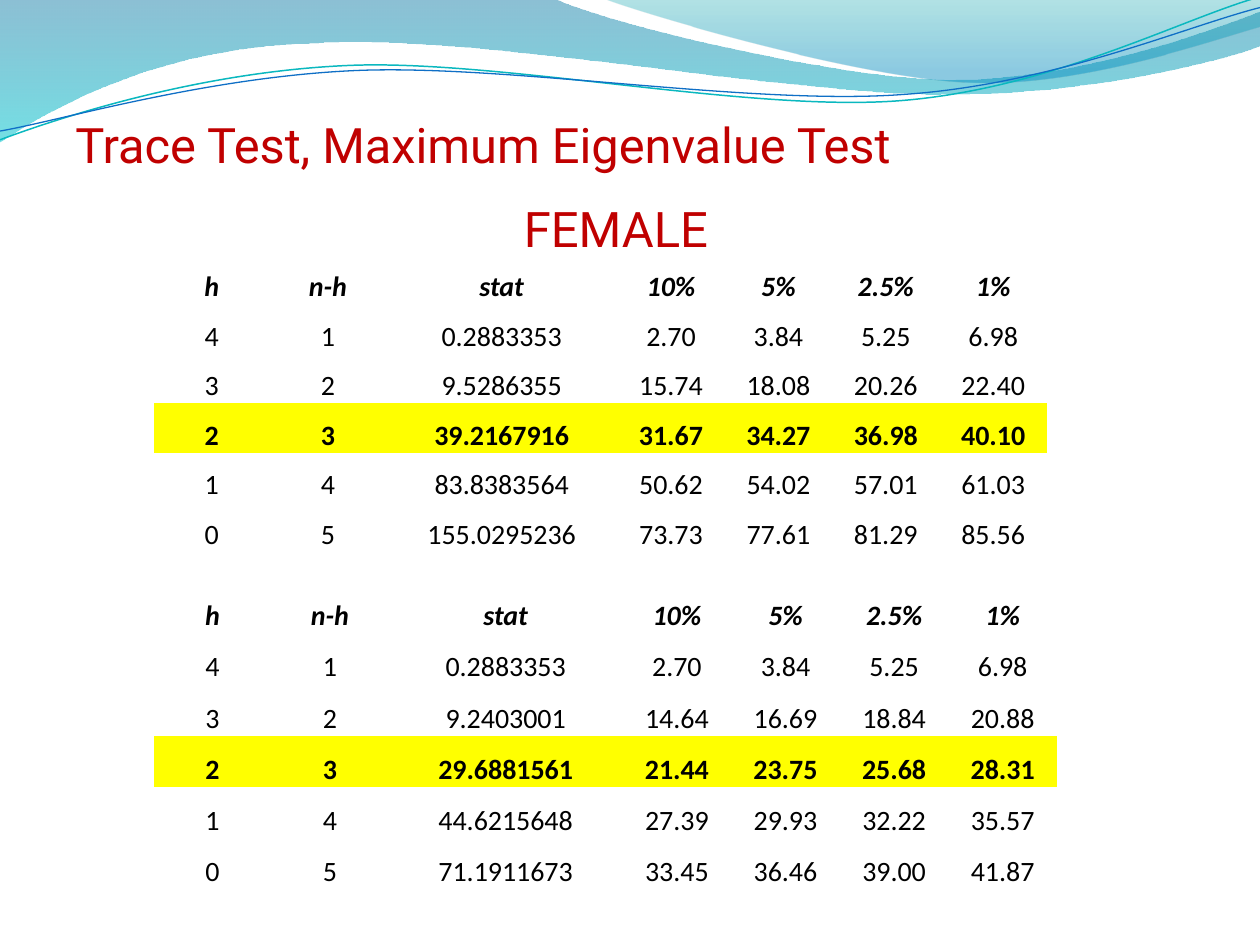
import math

import pptx
import pptx.dml.color
import pptx.enum.text
import pptx.oxml.ns
import pptx.util
from lxml import etree

Pt = pptx.util.Pt
RGBColor = pptx.dml.color.RGBColor
qn = pptx.oxml.ns.qn
ALIGN = pptx.enum.text.PP_ALIGN
ANCHOR = pptx.enum.text.MSO_ANCHOR

RED = RGBColor(0xC0, 0x00, 0x00)
BLACK = RGBColor(0x00, 0x00, 0x00)
YELLOW = RGBColor(0xFF, 0xFF, 0x00)
OCEAN = RGBColor(0x00, 0x74, 0xA1)
AQUA = RGBColor(0x00, 0xC6, 0xCF)
TEAL = RGBColor(0x00, 0xA1, 0xA9)
SKY = RGBColor(0x00, 0x8B, 0xBF)
TURQUOISE = RGBColor(0x0A, 0xB8, 0xBF)
BLUE = RGBColor(0x0F, 0x6F, 0xC6)

PLAIN_TABLE_STYLE = "{2D5ABB26-0587-4C30-8999-92F81FD0307C}"
COLUMN_WEIGHTS = (0.92, 0.92, 1.83, 0.85, 0.85, 0.85, 0.85)
HEADINGS = ("h", "n-h", "stat", "10%", "5%", "2.5%", "1%")
HIGHLIGHTED_ROW = 3
LINE_TURN = 357.3

TRACE_ROWS = (
    ("4", "1", "0.2883353", "2.70", "3.84", "5.25", "6.98"),
    ("3", "2", "9.5286355", "15.74", "18.08", "20.26", "22.40"),
    ("2", "3", "39.2167916", "31.67", "34.27", "36.98", "40.10"),
    ("1", "4", "83.8383564", "50.62", "54.02", "57.01", "61.03"),
    ("0", "5", "155.0295236", "73.73", "77.61", "81.29", "85.56"),
)
EIGENVALUE_ROWS = (
    ("4", "1", "0.2883353", "2.70", "3.84", "5.25", "6.98"),
    ("3", "2", "9.2403001", "14.64", "16.69", "18.84", "20.88"),
    ("2", "3", "29.6881561", "21.44", "23.75", "25.68", "28.31"),
    ("1", "4", "44.6215648", "27.39", "29.93", "32.22", "35.57"),
    ("0", "5", "71.1911673", "33.45", "36.46", "39.00", "41.87"),
)

BROAD_WAVE = (
    (0, 0), (316.8, -0.7),
    (342.7, 12.2, 478.1, 45.4, 545.8, 45.4), (613.8, 45.4, 689.8, 18.7, 720, 6.5),
    (720.7, 25.9),
    (707.8, 31.7, 626.4, 54.7, 537.1, 54), (447.8, 54, 275, 20.2, 185, 24.5),
    (92.9, 25.9, 33.1, 59.8, -0.7, 81.4), (0, 0),
)
CORNER_WAVE = (
    (344.9, -0.7),
    (366.5, 7.9, 491, 44.6, 553.7, 46.8), (616.3, 49.7, 691.9, 23, 720, 15.1),
    (720, 0), (344.9, -0.7),
)
TURQUOISE_LINE = (
    (0, 79.9),
    (34.6, 67, 113.8, 41, 199.4, 37.4), (284.4, 33.8, 427, 64.1, 513.4, 57.6),
    (599.8, 51.1, 675.4, 10.8, 718.6, -1.4),
)
BLUE_LINE = (
    (0, 74.9),
    (33.8, 69.1, 118.1, 43.9, 203.8, 40.3), (290.2, 36.7, 429.8, 60.5, 516.2, 54),
    (601.9, 48.2, 677.5, 15.1, 720, 4.3),
)


def add_outline(page, box, outline, closed, turn=0):
    left, top, width, height = box
    cosine, sine = math.cos(math.radians(-turn)), math.sin(math.radians(-turn))

    def place(x, y):
        across, down = x - left - width / 2, y - top - height / 2
        return (Pt(width / 2 + across * cosine - down * sine),
                Pt(height / 2 + across * sine + down * cosine))

    builder = page.shapes.build_freeform(*place(*outline[0]))
    builder.add_line_segments([place(*step[-2:]) for step in outline[1:]], close=closed)
    shape = builder.convert_to_shape()
    shape.left, shape.top, shape.width, shape.height = map(Pt, box)
    shape.rotation = turn
    shape.shadow.inherit = False

    route = next(shape.element.iter(qn("a:path")))
    route.set("w", str(Pt(width)))
    route.set("h", str(Pt(height)))
    for segment, step in zip(list(route), outline):
        segment.clear()
        if len(step) == 6:
            segment.tag = qn("a:cubicBezTo")
        for index in range(0, len(step), 2):
            x, y = place(*step[index:index + 2])
            etree.SubElement(segment, qn("a:pt"), x=str(x), y=str(y))
    return shape


def add_wave(page, box, outline, stops):
    shape = add_outline(page, box, outline, True)
    shape.line.fill.background()
    shape.fill.gradient()
    shape.fill.gradient_angle = 270
    for stop, (position, color, _) in zip(shape.fill.gradient_stops, stops):
        stop.position = position
        stop.color.rgb = color
    colors = shape.element.iter(qn("a:srgbClr"))
    for color, (_, _, opacity) in zip(colors, stops):
        etree.SubElement(color, qn("a:alpha"), val=str(opacity * 1000))


def add_wave_line(page, box, outline, color, width):
    shape = add_outline(page, box, outline, False, LINE_TURN)
    shape.fill.background()
    shape.line.color.rgb = color
    shape.line.width = Pt(width)


def add_banner(page):
    add_wave(page, (-0.7, -0.7, 721.4, 82.1), BROAD_WAVE, ((0, OCEAN, 45), (1, AQUA, 55)))
    add_wave(page, (344.9, -0.7, 375.1, 50.4), CORNER_WAVE, ((0, TEAL, 30), (0.8, SKY, 45)))
    add_wave_line(page, (-1.4, 15.8, 721.4, 51.1), TURQUOISE_LINE, TURQUOISE, 0.85)
    add_wave_line(page, (-1.4, 21.6, 722.2, 41.8), BLUE_LINE, BLUE, 0.75)


def add_heading(page, box, text, size, anchor, side):
    frame = page.shapes.add_textbox(*map(Pt, box)).text_frame
    frame.word_wrap = True
    frame.vertical_anchor = anchor
    frame.margin_left = frame.margin_right = Pt(side)
    frame.margin_bottom = Pt(0)
    para = frame.paragraphs[0]
    para.text = text
    para.font.name = "Roboto"
    para.font.size = Pt(size)
    para.font.color.rgb = RED


def fill_cell(cell, text, row):
    cell.margin_left = cell.margin_right = cell.margin_top = Pt(0.7)
    cell.margin_bottom = Pt(0)
    cell.vertical_anchor = ANCHOR.BOTTOM
    if row == HIGHLIGHTED_ROW:
        cell.fill.solid()
        cell.fill.fore_color.rgb = YELLOW
    else:
        cell.fill.background()
    para = cell.text_frame.paragraphs[0]
    para.text = text
    para.alignment = ALIGN.CENTER
    para.font.name = "Calibri"
    para.font.size = Pt(16)
    para.font.color.rgb = BLACK
    para.font.bold = row in (0, HIGHLIGHTED_ROW)
    para.font.italic = row == 0


def add_test_table(page, box, body):
    rows = (HEADINGS,) + body
    width, height = box[2:]
    frame = page.shapes.add_table(len(rows), len(HEADINGS), *map(Pt, box))
    table = frame.table
    table.first_row = table.horz_banding = False
    frame.element.find(".//" + qn("a:tableStyleId")).text = PLAIN_TABLE_STYLE
    for column, weight in zip(table.columns, COLUMN_WEIGHTS):
        column.width = Pt(width * weight / sum(COLUMN_WEIGHTS))
    for row, texts in enumerate(rows):
        table.rows[row].height = Pt(height / len(rows))
        for column, text in enumerate(texts):
            fill_cell(table.cell(row, column), text, row)


def main():
    deck = pptx.Presentation()
    deck.slide_width, deck.slide_height = Pt(720), Pt(540)
    page = deck.slides.add_slide(deck.slide_layouts[6])
    add_banner(page)
    add_heading(page, (36.7, 54.7, 648, 44.6),
                "\v Trace Test, Maximum Eigenvalue Test", 27.9, ANCHOR.BOTTOM, 0)
    add_heading(page, (292.3, 109.8, 198.7, 41), "FEMALE", 28, ANCHOR.TOP, 7.2)
    add_test_table(page, (87.8, 145.4, 510.5, 170), TRACE_ROWS)
    add_test_table(page, (87.8, 332.6, 516.3, 175.7), EIGENVALUE_ROWS)
    deck.save("out.pptx")


if __name__ == "__main__":
    main()
